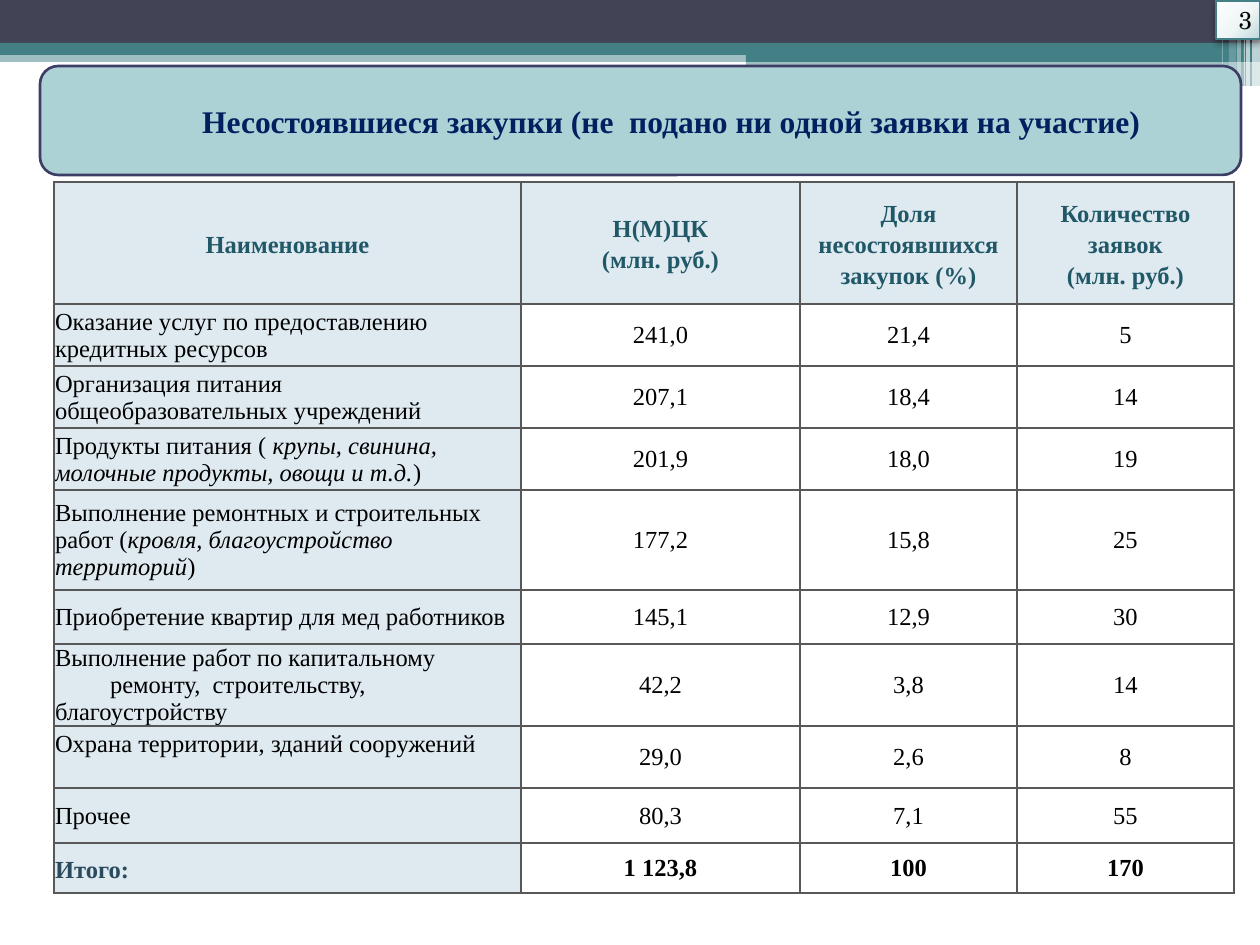
from lxml.etree import SubElement
from pptx import Presentation
from pptx.dml.color import RGBColor
from pptx.enum.shapes import MSO_SHAPE
from pptx.enum.text import MSO_ANCHOR, PP_ALIGN
from pptx.oxml import parse_xml
from pptx.oxml.ns import nsdecls, qn
from pptx.util import Emu, Pt

PX = 914400 / 126
WHITE = RGBColor(0xFF, 0xFF, 0xFF)
BLACK = RGBColor(0, 0, 0)
TEAL = RGBColor(0x43, 0x80, 0x86)
SLATE = RGBColor(0x42, 0x44, 0x56)
TITLE_FILL = RGBColor(0xAD, 0xD2, 0xD6)
TITLE_LINE = RGBColor(0x3D, 0x3E, 0x66)
NAVY = RGBColor(0, 0x20, 0x60)
HEADER_TEXT = RGBColor(0x21, 0x58, 0x68)
TOTAL_TEXT = RGBColor(0x2B, 0x4A, 0x5E)
CELL_FILL = RGBColor(0xDE, 0xE9, 0xF0)
SERIF = "Times New Roman"

deck = Presentation()
deck.slide_width, deck.slide_height = Emu(round(1260 * PX)), Emu(round(945 * PX))
page = deck.slides.add_slide(deck.slide_layouts[6])


def add_box(kind, left, top, width, height, color, opacity=100):
    """Add a shape in px with a plain fill and no line."""
    box = page.shapes.add_shape(kind, *(Emu(round(n * PX)) for n in (left, top, width, height)))
    box.shadow.inherit = False
    box.fill.solid()
    box.fill.fore_color.rgb = color
    box.line.fill.background()
    if opacity < 100:
        srgb = box._element.spPr.find(qn("a:solidFill"))[0]
        SubElement(srgb, qn("a:alpha"), val=str(opacity * 1000))
    return box


def add_span(para, text, color, size=14, bold=False, italic=False, font=SERIF):
    span = para.add_run()
    span.text = text
    span.font.name, span.font.size = font, Pt(size)
    span.font.bold, span.font.italic = bold, italic
    span.font.color.rgb = color


# Top bands, then the light stripes at the right edge
for left, top, width, height, color, opacity in [
    (0, 50, 1260, 12, TEAL, 50),
    (0, 0, 1260, 43, SLATE, 100),
    (0, 43, 1260, 12, TEAL, 100),
    (746, 49, 514, 13, TEAL, 100),
    (746, 61, 514, 25, TEAL, 50),
    (1252, 0, 8, 86, WHITE, 65),
    (1246, 0, 4, 86, WHITE, 65),
    (1244, 0, 1, 86, WHITE, 60),
    (1237, 0, 4, 86, WHITE, 40),
    (1229, 0, 7, 81, WHITE, 20),
    (1222, 0, 1, 81, WHITE, 30),
]:
    add_box(MSO_SHAPE.RECTANGLE, left, top, width, height, color, opacity)

# Table: each name is a list of paragraphs, each paragraph a list of (text, italic)
headers = [
    ["Наименование"],
    ["Н(М)ЦК", "(млн. руб.)"],
    ["Доля несостоявшихся закупок (%)"],
    ["Количество заявок", "(млн. руб.)"],
]
purchases = [
    ([[("Оказание услуг по предоставлению кредитных ресурсов", False)]], "241,0", "21,4", "5"),
    ([[("Организация питания", False)], [("общеобразовательных учреждений", False)]],
     "207,1", "18,4", "14"),
    ([[("Продукты питания ( ", False),
       ("крупы, свинина, молочные продукты, овощи и т.д.", True), (")", False)]],
     "201,9", "18,0", "19"),
    ([[("Выполнение ремонтных и строительных работ (", False),
       ("кровля, благоустройство территорий", True), (")", False)]], "177,2", "15,8", "25"),
    ([[("Приобретение квартир для мед работников", False)]], "145,1", "12,9", "30"),
    ([[("Выполнение работ по капитальному", False)],
      [("ремонту,  строительству, благоустройству", False)]], "42,2", "3,8", "14"),
    ([[("Охрана территории, зданий сооружений", False)]], "29,0", "2,6", "8"),
    ([[("Прочее", False)]], "80,3", "7,1", "55"),
    ([[("Итого:", False)]], "1 123,8", "100", "170"),
]
rows = [[[[(text, False)] for text in header] for header in headers]]
rows += [[name] + [[[(value, False)]] for value in values] for name, *values in purchases]
widths = [467, 279, 217, 217]
heights = [122, 62, 62, 62, 100, 54, 82, 62, 55, 50]
REPAIR_ROW, SECURITY_ROW, TOTAL_ROW = 6, 7, 9

table = page.shapes.add_table(
    len(rows), len(widths),
    *(Emu(round(n * PX)) for n in (54, 182, sum(widths), sum(heights)))).table
table.first_row = table.horz_banding = False
for column, width in zip(table.columns, widths):
    column.width = Emu(round(width * PX))
for row, height in zip(table.rows, heights):
    row.height = Emu(round(height * PX))

for r, row in enumerate(rows):
    for c, paragraphs in enumerate(row):
        cell = table.cell(r, c)
        is_header, is_name = r == 0, c == 0
        cell.vertical_anchor = MSO_ANCHOR.MIDDLE
        cell.margin_left = cell.margin_right = Emu(round((8 if is_header else 1) * PX))
        cell.margin_top = Emu(0 if is_header else round(PX))
        # The security row keeps one free line under its name
        cell.margin_bottom = Emu(round(27 * PX) if is_name and r == SECURITY_ROW else 0)
        for side in ("lnL", "lnR", "lnT", "lnB"):
            cell._tc.get_or_add_tcPr().append(parse_xml(
                f'<a:{side} {nsdecls("a")} w="12700"><a:solidFill>'
                f'<a:srgbClr val="585858"/></a:solidFill></a:{side}>'))
        if is_header or is_name:
            cell.fill.solid()
            cell.fill.fore_color.rgb = CELL_FILL
        else:
            cell.fill.background()

        color = HEADER_TEXT if is_header else BLACK
        if is_name and r == TOTAL_ROW:
            color = TOTAL_TEXT
        frame = cell.text_frame
        for i, spans in enumerate(paragraphs):
            para = frame.paragraphs[0] if i == 0 else frame.add_paragraph()
            para.alignment = PP_ALIGN.LEFT if is_name and not is_header else PP_ALIGN.CENTER
            if is_header or (is_name and r == TOTAL_ROW):
                para.line_spacing = 1.15
            if is_name and r == REPAIR_ROW and i == 1:
                para._p.get_or_add_pPr().set("indent", str(round(55 * PX)))
            for text, italic in spans:
                add_span(para, text, color, bold=r in (0, TOTAL_ROW), italic=italic)

# Page number
number = add_box(MSO_SHAPE.RECTANGLE, 1216, 1, 44, 38, WHITE)
number.line.color.rgb = TEAL
number.line.width = Pt(0.75)
properties = number._element.spPr
properties.replace(properties.find(qn("a:solidFill")), parse_xml(
    f'<a:gradFill {nsdecls("a")} rotWithShape="1"><a:gsLst>'
    '<a:gs pos="0"><a:srgbClr val="FEFEFE"/></a:gs>'
    '<a:gs pos="55000"><a:srgbClr val="F0F6F6"/></a:gs>'
    '<a:gs pos="100000"><a:srgbClr val="BFD9DD"/></a:gs></a:gsLst>'
    '<a:path path="circle"><a:fillToRect l="-40000" t="-90000" r="140000" b="190000"/>'
    '</a:path></a:gradFill>'))
properties.find(qn("a:effectLst")).append(parse_xml(
    f'<a:outerShdw {nsdecls("a")} blurRad="52000" dist="25400" dir="5400000" rotWithShape="0">'
    '<a:srgbClr val="000000"><a:alpha val="40000"/></a:srgbClr></a:outerShdw>'))
number.text_frame.word_wrap = True
number.text_frame.vertical_anchor = MSO_ANCHOR.MIDDLE
para = number.text_frame.paragraphs[0]
para.alignment = PP_ALIGN.CENTER
para.space_before = Pt(3)
para._p.get_or_add_pPr().set("marL", str(round(15 * PX)))
add_span(para, "3", BLACK, font="TeX Gyre Schola")

# Title
title = add_box(MSO_SHAPE.ROUNDED_RECTANGLE, 40, 66, 1201, 109, TITLE_FILL)
title.line.color.rgb = TITLE_LINE
title.line.width = Pt(1.5)
title.text_frame.word_wrap = True
title.text_frame.vertical_anchor = MSO_ANCHOR.MIDDLE
para = title.text_frame.paragraphs[0]
para.alignment = PP_ALIGN.CENTER
para._p.get_or_add_pPr().set("indent", str(round(62 * PX)))
add_span(para, "Несостоявшиеся закупки (не  подано ни одной заявки на участие)", NAVY, 18, bold=True)

deck.save("out.pptx")
